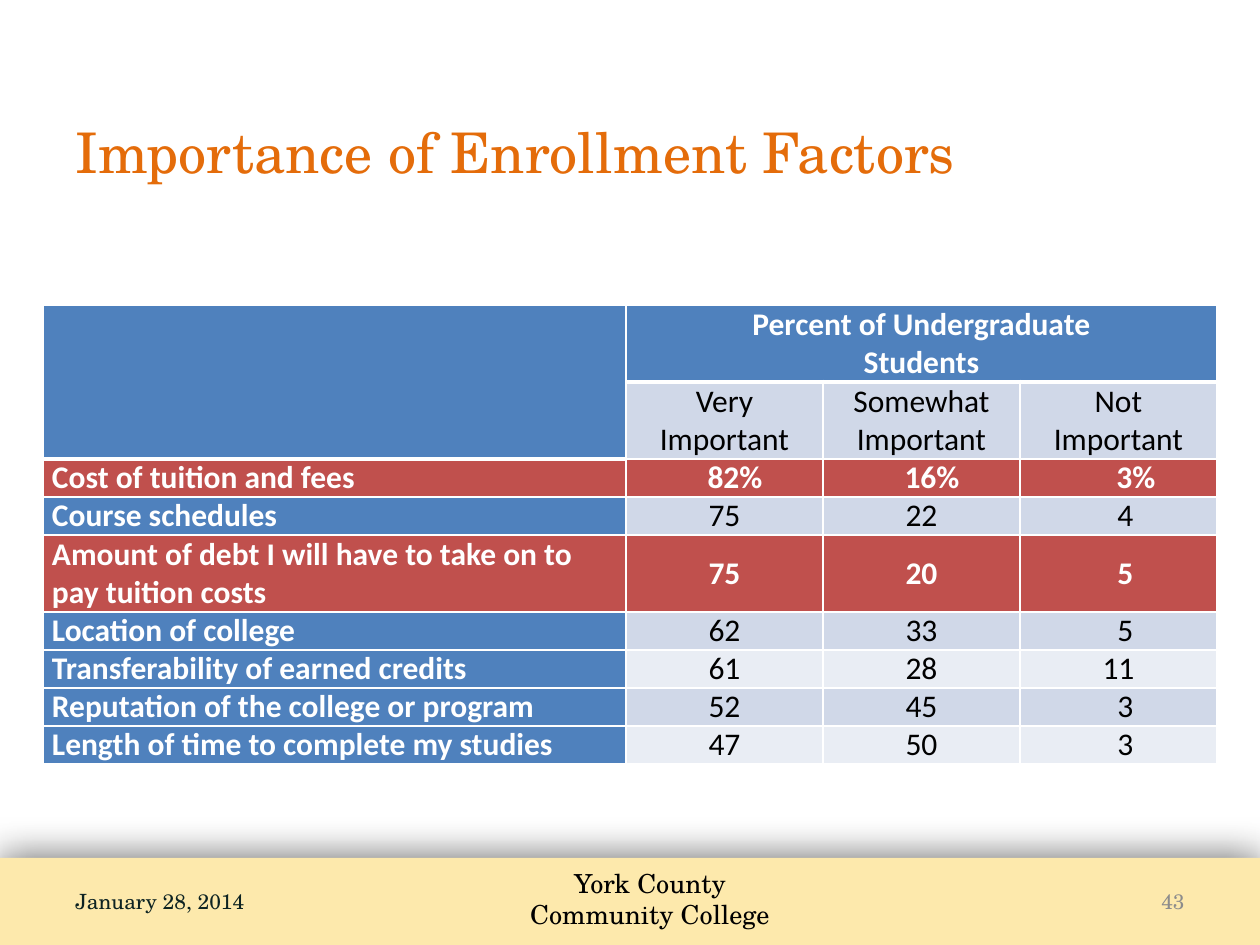
from lxml import etree
from pptx import Presentation
from pptx.dml.color import RGBColor
from pptx.enum.shapes import MSO_SHAPE
from pptx.enum.text import MSO_ANCHOR, PP_ALIGN
from pptx.oxml.ns import qn
from pptx.util import Emu, Pt

PX_PER_INCH = 126
LEFT, CENTER, RIGHT = PP_ALIGN.LEFT, PP_ALIGN.CENTER, PP_ALIGN.RIGHT
TOP, MIDDLE = MSO_ANCHOR.TOP, MSO_ANCHOR.MIDDLE
RECTANGLE = MSO_SHAPE.RECTANGLE

COLORS = {
    "title": "E46C0A",
    "bar": "FDE9AC",
    "date": "0D2322",
    "number": "8C8C8C",
    "black": "000000",
    "white": "FFFFFF",
    "blue": "4F81BD",
    "red": "C0504D",
    "band_dark": "D0D8E8",
    "band_light": "E9EDF4",
}

COLUMN_WIDTHS = [583, 197, 197, 197]
LINE_HEIGHT = 38
TWO_LINES = 77
CELL_INSET = 9

LEVELS = ["Very Important", "Somewhat Important", "Not Important"]

# factor, percentages, fill of the percentages, height
FACTORS = [
    ("Cost of tuition and fees", ["82%", "16%", "3%"], "red", LINE_HEIGHT),
    ("Course schedules", ["75", "22", "4"], "band_dark", LINE_HEIGHT),
    ("Amount of debt I will have to take on to pay tuition costs",
     ["75", "20", "5"], "red", TWO_LINES),
    ("Location of college", ["62", "33", "5"], "band_dark", LINE_HEIGHT),
    ("Transferability of earned credits", ["61", "28", "11"], "band_light", LINE_HEIGHT),
    ("Reputation of the college or program", ["52", "45", "3"], "band_dark", LINE_HEIGHT),
    ("Length of time to complete my studies", ["47", "50", "3"], "band_light", LINE_HEIGHT),
]


def px(length):
    return Emu(round(length * 914400 / PX_PER_INCH))


def rgb(name):
    return RGBColor.from_string(COLORS[name])


def add_color(parent, name):
    return etree.SubElement(parent, qn("a:srgbClr"), val=COLORS[name])


def write_text(frame, text, size=18, font="Calibri", color="black", bold=False, align=LEFT):
    """Fill a text frame, one paragraph for each line of text."""
    for index, line in enumerate(text.split("\n")):
        paragraph = frame.paragraphs[0] if index == 0 else frame.add_paragraph()
        paragraph.alignment = align
        run = paragraph.add_run()
        run.text = line
        run.font.size = Pt(size)
        run.font.name = font
        run.font.bold = bold
        run.font.color.rgb = rgb(color)


def indent_for(value):
    """Extra left inset that lines up the digits of centred percentages."""
    digits = len(value.rstrip("%"))
    return 14 * (2 - digits) + (21 if value.endswith("%") else 0)


class SlideBuilder:
    heading_font = "TeX Gyre Schola"

    def __init__(self, presentation):
        self.slide = presentation.slides.add_slide(presentation.slide_layouts[6])

    def bar(self, left, top, width, height):
        shape = self.slide.shapes.add_shape(RECTANGLE, px(left), px(top), px(width), px(height))
        shape.fill.solid()
        shape.fill.fore_color.rgb = rgb("bar")
        shape.line.fill.background()
        shape.shadow.inherit = False
        effects = shape.element.spPr.find(qn("a:effectLst"))
        shadow = etree.SubElement(effects, qn("a:outerShdw"), blurRad=str(Pt(23.8)),
                                  dist="0", dir="18000000", rotWithShape="0")
        etree.SubElement(add_color(shadow, "black"), qn("a:alpha"), val="65000")

    def text(self, text, left, top, width, height, anchor=MIDDLE, **style):
        box = self.slide.shapes.add_textbox(px(left), px(top), px(width), px(height))
        box.text_frame.word_wrap = True
        box.text_frame.vertical_anchor = anchor
        write_text(box.text_frame, text, font=self.heading_font, **style)

    def table(self, left, top, widths, heights):
        frame = self.slide.shapes.add_table(len(heights), len(widths), px(left), px(top),
                                            px(sum(widths)), px(sum(heights)))
        table = frame.table
        table.first_row = table.horz_banding = False
        for column, width in zip(table.columns, widths):
            column.width = px(width)
        for row, height in zip(table.rows, heights):
            row.height = px(height)
        return table

    def cell(self, cell, fill, text="", indent=0, bottom=1, **style):
        cell.margin_left = px(CELL_INSET + indent)
        cell.margin_right = px(CELL_INSET)
        cell.margin_top = cell.margin_bottom = 0
        cell.vertical_anchor = MIDDLE
        properties = cell._tc.get_or_add_tcPr()
        for side, width in (("L", 1), ("R", 1), ("T", 1), ("B", bottom)):
            line = etree.SubElement(properties, qn(f"a:ln{side}"), w=str(Pt(width)))
            add_color(etree.SubElement(line, qn("a:solidFill")), "white")
        cell.fill.solid()
        cell.fill.fore_color.rgb = rgb(fill)
        if text:
            write_text(cell.text_frame, text, **style)


def add_factor_table(builder):
    heights = [TWO_LINES, TWO_LINES] + [height for *_, height in FACTORS]
    table = builder.table(43, 305, COLUMN_WIDTHS, heights)

    table.cell(0, 0).merge(table.cell(1, 0))
    table.cell(0, 1).merge(table.cell(0, 3))
    builder.cell(table.cell(1, 0), "blue", bottom=3)
    for column in (0, 2, 3):
        builder.cell(table.cell(0, column), "blue", bottom=3)
    builder.cell(table.cell(0, 1), "blue", "Percent of Undergraduate\nStudents", bottom=3,
                 color="white", bold=True, align=CENTER)
    for column, level in enumerate(LEVELS, 1):
        builder.cell(table.cell(1, column), "band_dark", level, align=CENTER)

    for row, (factor, values, fill, _) in enumerate(FACTORS, 2):
        highlighted = fill == "red"
        builder.cell(table.cell(row, 0), "red" if highlighted else "blue", factor,
                     color="white", bold=True)
        for column, value in enumerate(values, 1):
            builder.cell(table.cell(row, column), fill, value, indent=indent_for(value),
                         color="white" if highlighted else "black",
                         bold=highlighted, align=CENTER)


def main():
    presentation = Presentation()
    presentation.slide_width, presentation.slide_height = px(1260), px(945)
    builder = SlideBuilder(presentation)
    builder.bar(0, 858, 1260, 87)
    builder.text("York County\nCommunity College", 488, 861, 324, 77,
                 anchor=TOP, size=15, align=CENTER)
    builder.text("Importance of Enrollment Factors", 63, 103, 1134, 96, size=32, color="title")
    builder.text("January 28, 2014", 63, 876, 315, 50, size=12, color="date")
    builder.text("43", 903, 876, 294, 50, size=12, color="number", align=RIGHT)
    add_factor_table(builder)
    presentation.save("out.pptx")


if __name__ == "__main__":
    main()
